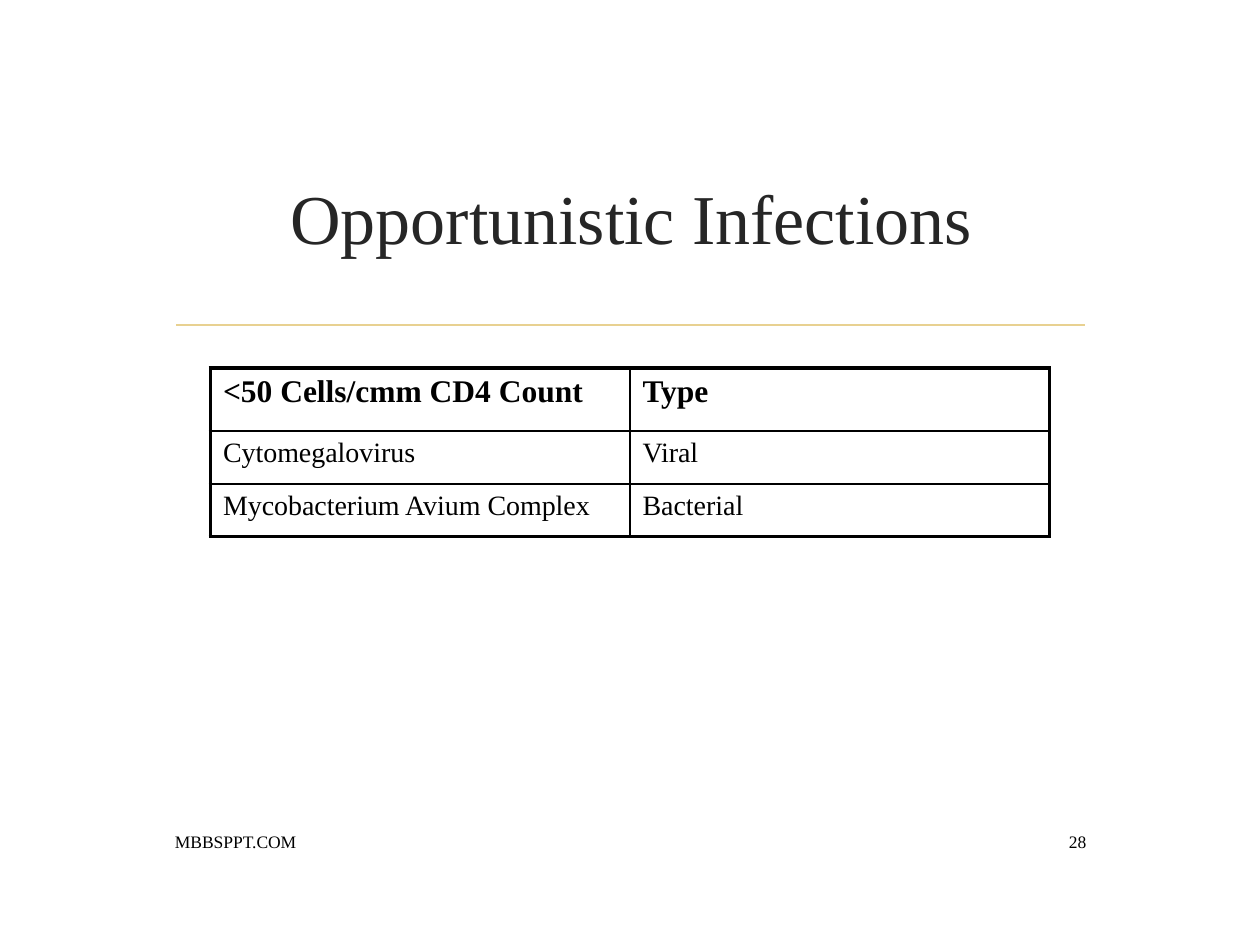
from lxml.etree import SubElement as Sub
from pptx import Presentation
from pptx.dml.color import RGBColor as Rgb
from pptx.enum.text import MSO_ANCHOR as Anchor, PP_ALIGN as Align
from pptx.oxml.ns import qn
from pptx.util import Inches, Pt

# Content
TITLE = "Opportunistic Infections"
ROWS = [
    ("<50 Cells/cmm CD4 Count", "Type"),
    ("Cytomegalovirus", "Viral"),
    ("Mycobacterium Avium Complex", "Bacterial"),
]
NOTES = [  # text, left, width, alignment
    ("MBBSPPT.COM", 1.29, 5.58, Align.LEFT),
    ("28", 8.29, 0.43, Align.RIGHT),
]
HUES = {"ink": "000000", "title": "262626", "rule": "E8D191", "page": "FFFFFF"}
FONT = "Times New Roman"
HIGH = [0.5, 0.42, 0.42]
WIDE = 3.33
THICK, THIN = 2.25, 1


def hue(name):
    return Rgb.from_string(HUES[name])


def write(frame, text, size=10, color="ink", bold=False, align=Align.LEFT):
    frame.word_wrap = True
    para = frame.paragraphs[0]
    para.alignment = align
    run = para.add_run()
    run.text = text
    font = run.font
    font.name, font.size, font.bold = FONT, Pt(size), bold
    font.color.rgb = hue(color)


def edge(cell, side, width):
    line = Sub(cell._tc.get_or_add_tcPr(), qn("a:ln" + side), w=str(Pt(width)))
    fill = Sub(line, qn("a:solidFill"))
    Sub(fill, qn("a:srgbClr"), val=HUES["ink"])


deck = Presentation()
deck.slide_width, deck.slide_height = Inches(10), Inches(7.5)
slide = deck.slides.add_slide(deck.slide_layouts[5])
slide.background.fill.solid()
slide.background.fill.fore_color.rgb = hue("page")
shapes = slide.shapes

# Rule under the title
y = Inches(2.58)
rule = shapes.add_connector(1, Inches(1.4), y, Inches(8.61), y)
rule.line.color.rgb = hue("rule")
rule.line.width = Pt(1.25)
Sub(rule._element.spPr, qn("a:effectLst"))

# Title
head = shapes.title
head.left, head.top = Inches(1.29), Inches(1)
head.width, head.height = Inches(7.44), Inches(1.43)
head.text_frame.vertical_anchor = Anchor.MIDDLE
write(head.text_frame, TITLE, size=40, color="title", align=Align.CENTER)

# Table: thick outer frame, thin inner lines
rows, cols = len(ROWS), len(ROWS[0])
grid = shapes.add_table(rows, cols, Inches(1.67), Inches(2.92),
                        Inches(WIDE * cols), Inches(sum(HIGH))).table
grid.horz_banding = False
for col in grid.columns:
    col.width = Inches(WIDE)
for r, texts in enumerate(ROWS):
    grid.rows[r].height = Inches(HIGH[r])
    for c, text in enumerate(texts):
        cell = grid.cell(r, c)
        write(cell.text_frame, text, size=16 if r else 18, bold=r == 0)
        outer = {"L": c == 0, "R": c == cols - 1,
                 "T": r == 0, "B": r == rows - 1}
        for side, rim in outer.items():
            edge(cell, side, THICK if rim else THIN)
        cell.fill.background()

# Footer and page number
for text, left, width, align in NOTES:
    box = shapes.add_textbox(Inches(left), Inches(6.52),
                             Inches(width), Inches(0.31))
    box.text_frame.vertical_anchor = Anchor.MIDDLE
    write(box.text_frame, text, align=align)

deck.save("out.pptx")
